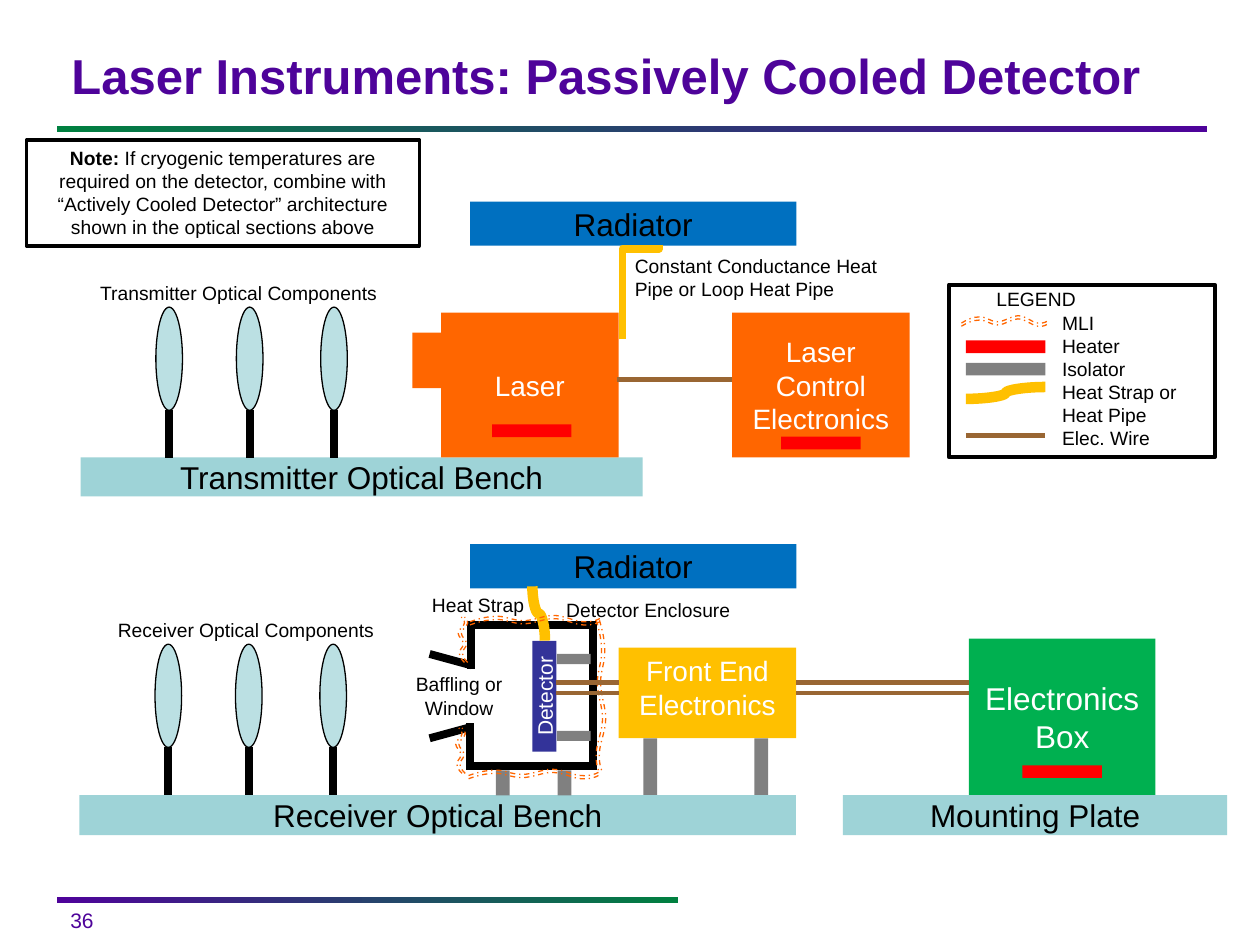
import math
from dataclasses import dataclass

import pptx
import pptx.dml.color
import pptx.enum.dml
import pptx.enum.shapes
import pptx.enum.text
import pptx.oxml.ns
import pptx.oxml.xmlchemy
import pptx.util

Pt = pptx.util.Pt
SHAPE = pptx.enum.shapes.MSO_SHAPE
CONNECTOR = pptx.enum.shapes.MSO_CONNECTOR
ALIGN = pptx.enum.text.PP_ALIGN
ANCHOR = pptx.enum.text.MSO_ANCHOR
qn = pptx.oxml.ns.qn
new_element = pptx.oxml.xmlchemy.OxmlElement


@dataclass(frozen=True)
class Theme:
    font: str = "Arial"
    black: str = "000000"
    white: str = "FFFFFF"
    purple: str = "4E039A"
    green: str = "008040"
    bench: str = "9ED3D7"
    lens: str = "BBE0E3"
    radiator: str = "0070C0"
    laser: str = "FF6600"
    heater: str = "FF0000"
    isolator: str = "808080"
    heat_strap: str = "FFC000"
    wire: str = "996633"
    detector: str = "333399"
    electronics: str = "00B050"
    title_size: int = 28
    large: int = 18
    medium: int = 16
    small: int = 12
    label: int = 11


THEME = Theme()

# Curve points of the insulation line, as shares of its length and height
WAVE = [(0, 1), (.07, .5), (.13, .17), (.2, .17), (.26, 0), (.33, .83), (.41, .83), (.49, .83),
        (.57, 0), (.64, 0), (.73, 0), (.81, 1), (.87, 1), (.93, 1.1), (.97, .83), (1, .5)]


def points(*values):
    return [Pt(value) for value in values]


def colour(code):
    return pptx.dml.color.RGBColor.from_string(code)


def write(box, text, size=THEME.label, color=THEME.black, align=ALIGN.LEFT,
          anchor=ANCHOR.TOP, bold=False, wrap=True, spacing=None, lead=None):
    """Fill a box with one paragraph per line of text, after an optional bold lead."""
    frame = box.text_frame
    frame.word_wrap = wrap
    frame.vertical_anchor = anchor
    for index, line in enumerate(text.split("\n")):
        para = frame.add_paragraph() if index else frame.paragraphs[0]
        para.alignment = align
        if spacing:
            para.line_spacing = spacing
        spans = [(line, bold)]
        if lead and index == 0:
            spans.insert(0, (lead, True))
        for content, is_bold in spans:
            span = para.add_run()
            span.text = content
            span.font.name = THEME.font
            span.font.size = Pt(size)
            span.font.bold = is_bold
            span.font.color.rgb = colour(color)


def add_label(page, place, text, **text_format):
    write(page.shapes.add_textbox(*points(*place)), text, **text_format)


def style_outline(shape, color, width):
    if color:
        shape.line.color.rgb = colour(color)
        shape.line.width = Pt(width)
    else:
        shape.line.fill.background()


def add_block(page, place, fill=None, outline=None, width=0.75, kind=SHAPE.RECTANGLE,
              text=None, size=THEME.large, color=THEME.black, anchor=ANCHOR.MIDDLE, **text_format):
    block = page.shapes.add_shape(kind, *points(*place))
    block.shadow.inherit = False
    if fill:
        block.fill.solid()
        block.fill.fore_color.rgb = colour(fill)
    else:
        block.fill.background()
    style_outline(block, outline, width)
    if text:
        write(block, text, size=size, color=color, align=ALIGN.CENTER, anchor=anchor, **text_format)
    return block


def add_gradient_rule(page, place, first, last):
    rule = add_block(page, place)
    rule.fill.gradient()
    rule.fill.gradient_angle = 0
    for stop, code, position in zip(rule.fill.gradient_stops, (first, last), (0, 1)):
        stop.color.rgb = colour(code)
        stop.position = position


def add_line(page, begin, end, color=THEME.black, width=4.5, kind=CONNECTOR.STRAIGHT,
             rotation=0, bend=None):
    line = page.shapes.add_connector(kind, *points(*begin, *end))
    style_outline(line, color, width)
    properties = line._element.spPr
    properties.append(new_element("a:effectLst"))
    if rotation:
        properties.find(qn("a:xfrm")).set("rot", str(rotation * 60000))
    if bend:
        guide = new_element("a:gd")
        guide.set("name", "adj1")
        guide.set("fmla", f"val {round(bend * 100000)}")
        properties.find(qn("a:prstGeom")).get_or_add_avLst().append(guide)
    return line


def add_wire(page, begin, end):
    return add_line(page, begin, end, color=THEME.wire, width=2.75)


def add_heater(page, left, top):
    add_block(page, (left, top, 45.4, 7.2), THEME.heater)


def add_wave(page, left, top, length, height, rotation):
    corners = [(Pt(left + u * length), Pt(top + v * height)) for u, v in WAVE]
    builder = page.shapes.build_freeform(*corners[0])
    builder.add_line_segments(corners[1:], close=False)
    wave = builder.convert_to_shape()
    wave.shadow.inherit = False
    wave.fill.background()
    style_outline(wave, THEME.laser, 0.75)
    wave.line.dash_style = pptx.enum.dml.MSO_LINE.DASH_DOT
    wave.rotation = rotation
    # Turn each three straight steps into one Bezier step
    outline = wave._element.find(".//" + qn("a:path"))
    steps = outline.findall(qn("a:lnTo"))
    for start in range(0, len(steps), 3):
        curve = new_element("a:cubicBezTo")
        for step in steps[start:start + 3]:
            curve.append(step[0])
            outline.remove(step)
        outline.append(curve)


def add_insulation(page, left, top, length, height=3.6, rotation=0):
    """Draw a pair of parallel waves, the second one on the outer side."""
    angle = math.radians(rotation)
    for gap in (0, 1.8):
        add_wave(page, left + gap * math.sin(angle), top - gap * math.cos(angle),
                 length, height, rotation)


def add_optics(page, first_center, top):
    for offset in (0, 46, 94.2):
        center = first_center + offset
        add_block(page, (center - 7.6, top, 15.2, 59), THEME.lens, THEME.black, kind=SHAPE.OVAL)
        add_line(page, (center, top + 58.5), (center, top + 86.2))


def add_bench(page, place, text):
    add_block(page, place, THEME.bench, text=text)


def add_radiator(page, top):
    add_block(page, (268.6, top, 186.5, 25.2), THEME.radiator, text="Radiator")


def draw_frame(page):
    add_gradient_rule(page, (32.4, 72, 657.4, 3.6), THEME.green, THEME.purple)
    add_gradient_rule(page, (32.4, 512.6, 355, 3.6), THEME.purple, THEME.green)
    add_label(page, (33.1, 514.8, 28.8, 21.6), "36", size=THEME.small, color=THEME.purple, wrap=False)
    add_label(page, (33.8, 14.4, 653, 62.6), "Laser Instruments: Passively Cooled Detector",
              size=THEME.title_size, color=THEME.purple, bold=True, anchor=ANCHOR.MIDDLE, spacing=0.8)
    add_block(page, (15.1, 80, 224.6, 60.5), THEME.white, THEME.black, 2, lead="Note:",
              text=" If cryogenic temperatures are required on the detector, combine with "
                   "“Actively Cooled Detector” architecture shown in the optical sections above",
              size=THEME.label, anchor=ANCHOR.TOP)


def draw_legend(page):
    add_block(page, (542.2, 162.7, 152, 98.6), outline=THEME.black, width=2.25)
    add_label(page, (562.3, 160.6, 62.6, 20.9), "LEGEND")
    add_label(page, (599.8, 174.2, 89.3, 87.1),
              "MLI\nHeater\nIsolator\nHeat Strap or Heat Pipe\nElec. Wire")
    add_insulation(page, 549.4, 182.2, 50.4, 4.2)
    add_heater(page, 552, 194.6)
    add_block(page, (552, 207.4, 45.4, 7.2), THEME.isolator)
    add_line(page, (552, 228), (597.4, 221.2), THEME.heat_strap, 6, CONNECTOR.CURVE)
    add_wire(page, (552, 249.1), (597.4, 249.1))


def draw_transmitter(page):
    add_bench(page, (46.1, 261.4, 321.1, 22.3), "Transmitter Optical Bench")
    add_optics(page, 96.7, 175.5)
    add_label(page, (46.1, 157, 180.7, 20.9), "Transmitter Optical Components", align=ALIGN.CENTER)
    for left, text in ((252, "Laser"), (418.3, "Laser Control Electronics")):
        add_block(page, (left, 178.6, 101.5, 82.8), THEME.laser, text=text,
                  size=THEME.medium, color=THEME.white)
    add_block(page, (235.6, 190.1, 18, 31.7), THEME.laser)
    add_wire(page, (352.8, 216.9), (418.3, 216.9))
    add_radiator(page, 115.2)
    add_label(page, (355.7, 141.8, 169.9, 33.8), "Constant Conductance Heat Pipe or Loop Heat Pipe")
    add_line(page, (393.1, 177.4), (339.1, 156.5), THEME.heat_strap, 4.5, CONNECTOR.ELBOW,
             rotation=90, bend=0.96)
    add_heater(page, 281.2, 242.6)
    add_heater(page, 446.4, 249.6)


def draw_enclosure(page):
    walls = [((269.3, 357.1), (339.1, 357.1)), ((269.3, 437.8), (339.1, 437.8)),
             ((339.1, 355), (339.1, 439.9)), ((269.3, 355), (269.3, 382.3)),
             ((268.6, 413.3), (268.6, 439.9)), ((245.5, 421.9), (269.3, 415.4)),
             ((245.5, 373.7), (269.3, 380.2))]
    for begin, end in walls:
        add_line(page, begin, end)
    detector = add_block(page, (279.4, 391, 63.4, 13.7), THEME.detector, text="Detector",
                         size=THEME.small, color=THEME.white)
    detector.rotation = 270
    for top in (373.7, 417.6):
        add_block(page, (318.2, top, 19.4, 5.8), THEME.isolator)
    for left in (283.3, 318.6):
        add_block(page, (left, 440.2, 7.9, 14.4), THEME.isolator)
    add_line(page, (292.3, 354.2), (323.3, 347), THEME.heat_strap, 6, CONNECTOR.CURVE, rotation=270)
    add_label(page, (228.2, 380.9, 68.4, 33.8), "Baffling or Window", align=ALIGN.CENTER)
    add_label(page, (313.2, 338.4, 114.5, 20.9), "Detector Enclosure", align=ALIGN.CENTER)
    add_label(page, (192.2, 335.5, 114.5, 20.9), "Heat Strap", align=ALIGN.RIGHT)
    add_insulation(page, 268.6, 353.5, 74.2)
    add_insulation(page, 298.8, 396, 87.1, rotation=90)
    add_insulation(page, 267.8, 441.4, 74.2)
    add_insulation(page, 252.7, 363.6, 25.9, rotation=270)
    add_insulation(page, 251.3, 427, 25.9, rotation=270)


def draw_receiver(page):
    add_bench(page, (45.4, 454.3, 409.4, 23), "Receiver Optical Bench")
    add_bench(page, (481.7, 454.3, 219.6, 23), "Mounting Plate")
    add_optics(page, 96.2, 368.1)
    add_label(page, (55.4, 349.9, 170.6, 20.9), "Receiver Optical Components", align=ALIGN.CENTER)
    add_radiator(page, 311)
    draw_enclosure(page)
    add_block(page, (553.7, 365, 106.6, 89.3), THEME.electronics, text="Electronics Box",
              color=THEME.white)
    add_heater(page, 584.3, 437.4)
    front_end = add_block(page, (353.5, 370.1, 101.5, 51.8), THEME.heat_strap,
                          text="Front End Electronics", size=THEME.medium, color=THEME.white,
                          anchor=ANCHOR.TOP)
    for left in (367.6, 431):
        add_block(page, (left, 421.9, 7.9, 32.4), THEME.isolator)
    for height in (390.2, 396):
        inner = add_wire(page, (318, height), (353.5, height))
        outer = add_wire(page, (455, height), (553.7, height))
    # The lower wires meet the middle of the front end's sides
    inner.end_connect(front_end, 1)
    outer.begin_connect(front_end, 3)


def main():
    deck = pptx.Presentation()
    deck.slide_width, deck.slide_height = points(720, 540)
    page = deck.slides.add_slide(deck.slide_layouts[6])
    draw_frame(page)
    draw_legend(page)
    draw_transmitter(page)
    draw_receiver(page)
    deck.save("out.pptx")


if __name__ == "__main__":
    main()
